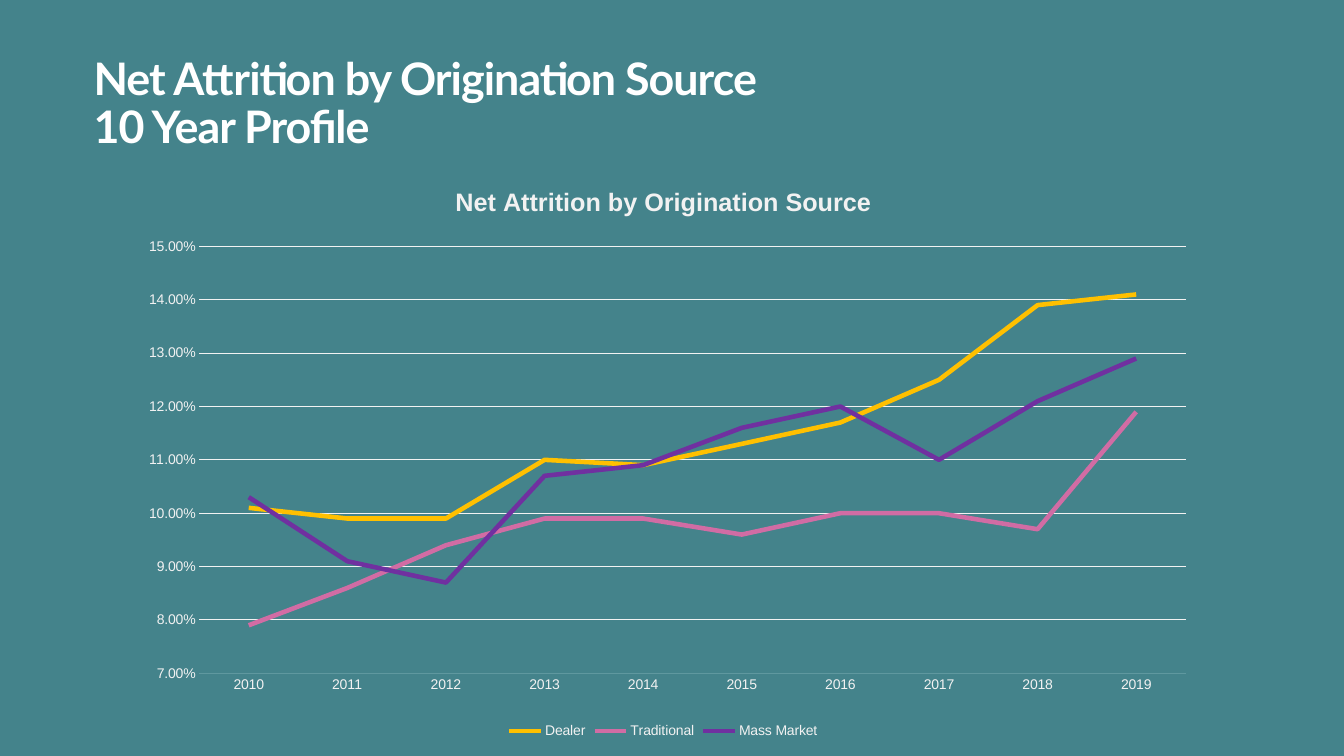
import lxml.etree
import pptx
import pptx.chart.data
import pptx.dml.color
import pptx.enum.chart
import pptx.enum.text
import pptx.oxml
import pptx.oxml.ns
import pptx.util

Inches = pptx.util.Inches
Pt = pptx.util.Pt
qn = pptx.oxml.ns.qn

YEARS = [str(year) for year in range(2010, 2020)]
SOURCES = [
    ("Dealer", "FFC000",
     [0.101, 0.099, 0.099, 0.11, 0.109, 0.113, 0.117, 0.125, 0.139, 0.141]),
    ("Traditional", "D16CA4",
     [0.079, 0.086, 0.094, 0.099, 0.099, 0.096, 0.1, 0.1, 0.097, 0.119]),
    ("Mass Market", "7030A0",
     [0.103, 0.091, 0.087, 0.107, 0.109, 0.116, 0.12, 0.11, 0.121, 0.129]),
]
PALE = "F2F2F2"


def color(value):
    return pptx.dml.color.RGBColor.from_string(value)


def style_font(font, size, value, name, bold=False):
    font.size = Pt(size)
    font.color.rgb = color(value)
    font.name = name
    font.bold = bold


def style_line(line, width, value):
    line.width = Pt(width)
    line.color.rgb = color(value)


def add_title(page, left, top, width, height):
    box = page.shapes.add_textbox(Inches(left), Inches(top), Inches(width), Inches(height))
    frame = box.text_frame
    frame.word_wrap = True
    frame.vertical_anchor = pptx.enum.text.MSO_ANCHOR.TOP
    para = frame.paragraphs[0]
    para.text = "Net Attrition by Origination Source\v10 Year Profile"
    para.line_spacing = 0.9
    style_font(para.font, 32, "FFFFFF", "Lato", True)
    para._p.pPr.find(qn("a:defRPr")).set("spc", "-70")


def place_plot(chart, x, y, width, height):
    plot_area = chart._chartSpace.chart.plotArea
    for old in plot_area.findall(qn("c:layout")):
        plot_area.remove(old)
    layout = lxml.etree.Element(qn("c:layout"))
    manual = lxml.etree.SubElement(layout, qn("c:manualLayout"))
    settings = [("layoutTarget", "inner"), ("xMode", "edge"), ("yMode", "edge"),
                ("x", x), ("y", y), ("w", width), ("h", height)]
    for tag, value in settings:
        lxml.etree.SubElement(manual, qn("c:" + tag)).set("val", str(value))
    plot_area.insert(0, layout)


def style_axes(chart):
    for axis in (chart.category_axis, chart.value_axis):
        axis.major_tick_mark = pptx.enum.chart.XL_TICK_MARK.NONE
        axis.minor_tick_mark = pptx.enum.chart.XL_TICK_MARK.NONE
        style_font(axis.tick_labels.font, 10, PALE, "Arial")
    style_line(chart.category_axis.format.line, 0.75, "5F989F")
    values = chart.value_axis
    values.minimum_scale = 0.07
    values.maximum_scale = 0.15
    values.major_unit = 0.01
    values.tick_labels.number_format = "0.00%"
    values.tick_labels.number_format_is_linked = False
    values.format.line.fill.background()
    values.has_major_gridlines = True
    style_line(values.major_gridlines.format.line, 0.75, PALE)


def add_attrition_chart(page, left, top, width, height):
    data = pptx.chart.data.CategoryChartData(number_format="0.00%")
    data.categories = YEARS
    for name, _, rates in SOURCES:
        data.add_series(name, rates)
    chart = page.shapes.add_chart(
        pptx.enum.chart.XL_CHART_TYPE.LINE, Inches(left), Inches(top),
        Inches(width), Inches(height), data).chart
    style_font(chart.font, 10, PALE, "Arial")

    chart.has_title = True
    heading = chart.chart_title.text_frame.paragraphs[0]
    heading.text = "Net Attrition by Origination Source"
    style_font(heading.font, 18, PALE, "Arial", True)

    chart.has_legend = True
    chart.legend.position = pptx.enum.chart.XL_LEGEND_POSITION.BOTTOM
    chart.legend.include_in_layout = False
    style_font(chart.legend.font, 10, PALE, "Arial")

    style_axes(chart)
    place_plot(chart, 0.077, 0.142, 0.899, 0.738)
    chart.plots[0].vary_by_categories = False
    for series, (_, value, _) in zip(chart.plots[0].series, SOURCES):
        series.smooth = False
        series.marker.style = pptx.enum.chart.XL_MARKER_STYLE.NONE
        style_line(series.format.line, 3.25, value)


def build_attrition_slide(deck):
    page = deck.slides.add_slide(deck.slide_layouts[6])
    page.background.fill.solid()
    page.background.fill.fore_color.rgb = color("44838B")
    add_title(page, 0.83, 0.51, 9.4, 1.44)
    add_attrition_chart(page, 1.14, 1.63, 10.88, 5.74)


def main():
    deck = pptx.Presentation()
    deck.slide_width = Inches(13.33)
    deck.slide_height = Inches(7.5)
    build_attrition_slide(deck)
    deck.save("out.pptx")


if __name__ == "__main__":
    main()
